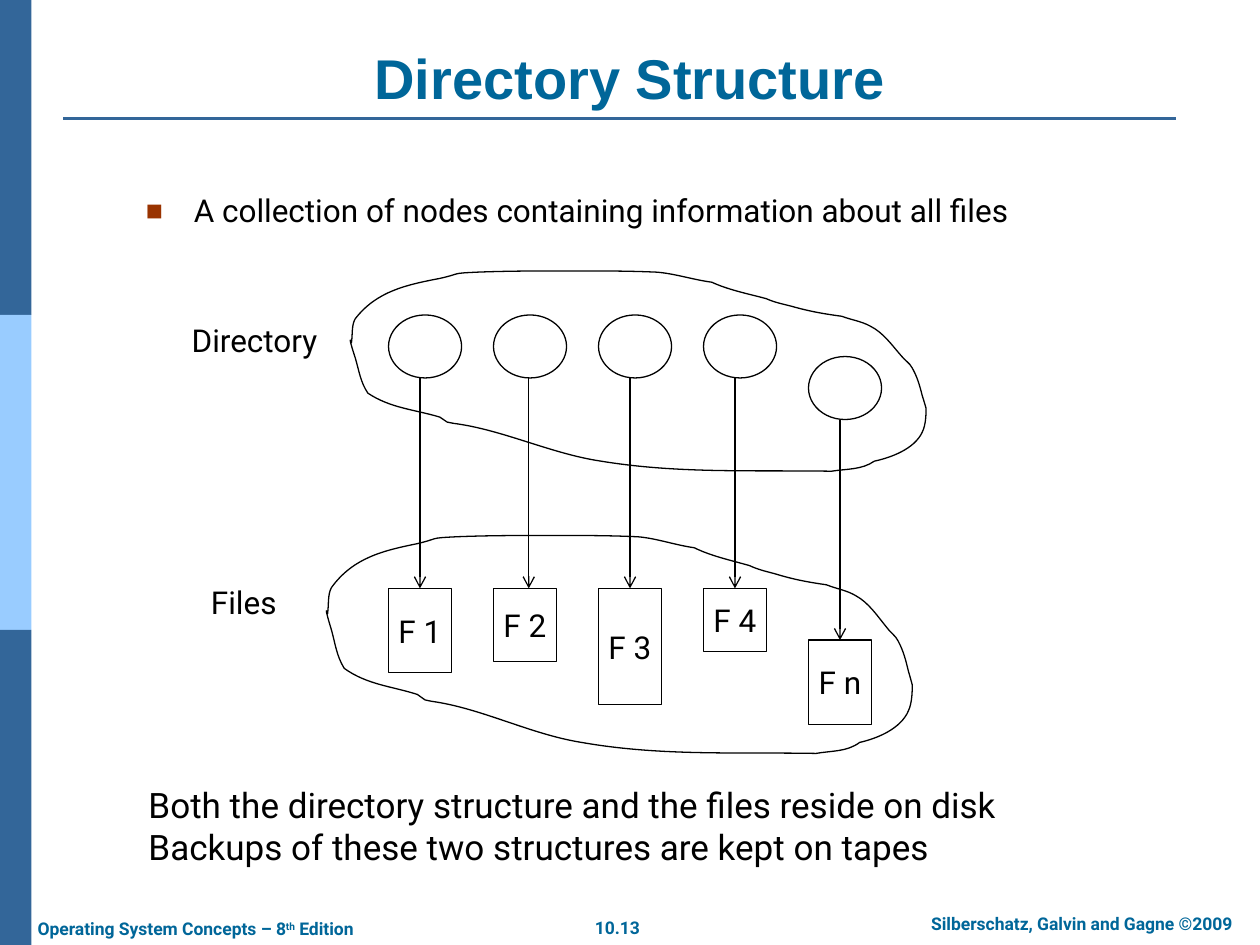
from lxml import etree
from pptx import Presentation
from pptx import util as u
from pptx.dml.color import RGBColor
from pptx.enum import shapes, text
from pptx.oxml.ns import qn

BLACK = RGBColor(0x00, 0x00, 0x00)
WHITE = RGBColor(0xFF, 0xFF, 0xFF)
NAVY = RGBColor(0x33, 0x66, 0x99)
SKY = RGBColor(0x99, 0xCC, 0xFF)
TEAL = RGBColor(0x00, 0x66, 0x99)
BULLET_COLOR = RGBColor(0x99, 0x33, 0x00)

# Content: a paragraph is a string or a list of (text, is superscript)
TITLE = "Directory Structure"
BULLET = "A collection of nodes containing information about all files"
CLOSING = ["Both the directory structure and the files reside on disk",
           "Backups of these two structures are kept on tapes"]
EDITION = [("Operating System Concepts – 8", False), ("th", True), (" Edition", False)]
FOOTERS = [  # paragraph, box, alignment, wrap
    ("10.13", (4.62, 7.23, 0.56, 0.27), "CENTER", False),
    ("Silberschatz, Galvin and Gagne ©2009", (7.1, 7.2, 2.97, 0.27), "CENTER", True),
    (EDITION, (0.2, 7.24, 2.88, 0.27), "LEFT", False),
]
LABELS = [("Directory", (1.42, 2.5, 1.2, 0.4)), ("Files", (1.57, 4.58, 0.73, 0.4))]
FILES = [  # name, file height, drop of the column, arrow shift
    ("F 1", 0.67, 0, 0), ("F 2", 0.58, 0, 0.03), ("F 3", 0.92, 0, 0),
    ("F 4", 0.5, 0, 0), ("F n", 0.67, 1, 0),
]
MIDDLE_LEFT, COLUMN_PITCH = 4.75, 5 / 6
NODE_TOP, NODE_DROP, NODE_SIZE = 2.5, 0.33, (0.58, 0.5)
FILE_TOP, FILE_DROP, FILE_WIDTH = 4.67, 0.41, 0.5

# Cloud outline: start point, then cubic curves (two handles and an end point)
CLOUD_BOX = (2.78, 2.15, 4.57, 1.59)
FILES_CLOUD_BOX = (2.59, 4.25, 4.65, 1.73)
CLOUD_START = (2.79, 2.72)
CLOUD_CURVES = [
    (2.8, 2.65, 2.79, 2.58, 2.82, 2.53), (2.99, 2.31, 3.23, 2.26, 3.49, 2.21),
    (3.67, 2.17, 3.57, 2.17, 3.79, 2.16), (4.04, 2.15, 4.29, 2.15, 4.55, 2.15),
    (4.77, 2.15, 4.99, 2.15, 5.21, 2.16), (5.35, 2.17, 5.5, 2.22, 5.65, 2.24),
    (5.78, 2.3, 5.93, 2.33, 6.08, 2.37), (6.15, 2.4, 6.2, 2.41, 6.28, 2.43),
    (6.42, 2.47, 6.53, 2.49, 6.68, 2.51), (6.76, 2.54, 6.84, 2.55, 6.91, 2.59),
    (7.01, 2.64, 7.08, 2.74, 7.15, 2.82), (7.18, 2.86, 7.22, 2.88, 7.24, 2.92),
    (7.28, 2.99, 7.3, 3.06, 7.32, 3.14), (7.33, 3.17, 7.35, 3.24, 7.35, 3.24),
    (7.35, 3.28, 7.35, 3.37, 7.32, 3.43), (7.26, 3.56, 7.08, 3.63, 6.94, 3.66),
    (6.84, 3.73, 6.72, 3.72, 6.6, 3.74), (5.96, 3.73, 5.38, 3.76, 4.77, 3.66),
    (4.37, 3.6, 3.99, 3.41, 3.6, 3.36), (3.58, 3.36, 3.57, 3.35, 3.55, 3.35),
    (3.53, 3.34, 3.51, 3.32, 3.49, 3.31), (3.29, 3.25, 3.1, 3.24, 2.92, 3.12),
    (2.86, 3.03, 2.85, 2.94, 2.82, 2.84), (2.82, 2.84, 2.78, 2.72, 2.78, 2.7),
    (2.78, 2.69, 2.79, 2.71, 2.79, 2.72),
]


def inches(values):
    return [u.Inches(value) for value in values]


def write(shape, paragraphs, size=18, font="Roboto", color=BLACK, bold=False,
          align="LEFT", anchor="TOP", wrap=True, bullet=False):
    frame = shape.text_frame
    frame.word_wrap = wrap
    frame.vertical_anchor = getattr(text.MSO_ANCHOR, anchor)
    for index, runs in enumerate(paragraphs):
        para = frame.add_paragraph() if index else frame.paragraphs[0]
        para.alignment = getattr(text.PP_ALIGN, align)
        if bullet:
            add_bullet(para)
        for words, raised in [(runs, False)] if isinstance(runs, str) else runs:
            span = para.add_run()
            span.text = words
            span.font.size, span.font.name, span.font.bold = u.Pt(size), font, bold
            span.font.color.rgb = color
            if raised:
                span.font._element.set("baseline", "30000")


def add_bullet(para):
    para.line_spacing = 0.9
    props = para._p.get_or_add_pPr()
    props.set("marL", str(u.Inches(0.38)))
    props.set("indent", str(u.Inches(-0.38)))
    color = etree.SubElement(props, qn("a:buClr"))
    etree.SubElement(color, qn("a:srgbClr"), val=str(BULLET_COLOR))
    etree.SubElement(props, qn("a:buSzPct"), val="90000")
    etree.SubElement(props, qn("a:buFont"), typeface="Arial")
    etree.SubElement(props, qn("a:buChar"), char="■")


def add_text(page, box, paragraphs, **style):
    write(page.shapes.add_textbox(*inches(box)), paragraphs, **style)


def add_block(page, kind, box, fill, outlined=True):
    block = page.shapes.add_shape(kind, *inches(box))
    block.shadow.inherit = False
    block.fill.solid()
    block.fill.fore_color.rgb = fill
    if outlined:
        outline(block)
    else:
        block.line.fill.background()
    return block


def outline(shape):
    shape.line.color.rgb = BLACK
    shape.line.width = u.Pt(0.75)


def add_line(page, start, end, color=BLACK, width=0.75, arrow=False):
    line = page.shapes.add_connector(shapes.MSO_CONNECTOR.STRAIGHT, *inches(start + end))
    line.line.color.rgb = color
    line.line.width = u.Pt(width)
    if arrow:
        etree.SubElement(line.line._get_or_add_ln(), qn("a:tailEnd"), type="arrow")
    etree.SubElement(line._element.spPr, qn("a:effectLst"))
    return line


def add_cloud(page, box):
    """Draw the cloud outline stretched from its own box to the given one."""
    left, top, width, height = CLOUD_BOX

    def place(x, y):
        return inches((box[0] + (x - left) * box[2] / width,
                       box[1] + (y - top) * box[3] / height))

    builder = page.shapes.build_freeform(*place(*CLOUD_START))
    builder.add_line_segments([place(*curve[4:]) for curve in CLOUD_CURVES], close=True)
    cloud = builder.convert_to_shape()
    cloud.shadow.inherit = False
    cloud.fill.background()
    outline(cloud)

    # Turn each straight segment into its cubic curve
    segments = list(cloud._element.iter(qn("a:lnTo")))
    for segment, curve in zip(segments, CLOUD_CURVES):
        segment.tag = qn("a:cubicBezTo")
        for position in (0, 2):
            x, y = place(*curve[position:position + 2])
            handle = etree.Element(qn("a:pt"), x=str(x - cloud.left), y=str(y - cloud.top))
            segment.insert(position // 2, handle)


def main():
    deck = Presentation()
    deck.slide_width, deck.slide_height = inches((10, 7.5))
    page = deck.slides.add_slide(deck.slide_layouts[6])
    rect, oval = shapes.MSO_SHAPE.RECTANGLE, shapes.MSO_SHAPE.OVAL

    # Side stripe, title rule and footers
    for index, color in enumerate((NAVY, SKY, NAVY)):
        add_block(page, rect, (0, index * 2.5, 0.25, 2.5), color, outlined=False)
    add_line(page, (0.5, 0.94), (9.33, 0.94), color=NAVY, width=1.5)
    for words, box, align, wrap in FOOTERS:
        add_text(page, box, [words], size=10, color=TEAL, bold=True, align=align, wrap=wrap)

    # Title and bullet
    add_text(page, (0.5, 0.3, 9, 0.63), [TITLE], size=32, font="Arial", color=TEAL,
             bold=True, align="CENTER", anchor="BOTTOM")
    add_text(page, (1.06, 1.5, 8.06, 0.39), [BULLET], bullet=True)

    # Directory nodes, files and the arrows between them
    for index, (name, height, drop, shift) in enumerate(FILES):
        left = MIDDLE_LEFT + (index - len(FILES) // 2) * COLUMN_PITCH
        node_top = NODE_TOP + drop * NODE_DROP
        file_top = FILE_TOP + drop * FILE_DROP
        add_block(page, oval, (left, node_top, *NODE_SIZE), WHITE)
        file_box = add_block(page, rect, (left, file_top, FILE_WIDTH, height), WHITE)
        write(file_box, [name], align="CENTER", anchor="MIDDLE", wrap=False)
        x = left + FILE_WIDTH / 2 + shift
        arrow = add_line(page, (x, node_top + NODE_SIZE[1]), (x, file_top), arrow=True)
        if not shift:
            arrow.end_connect(file_box, 0)

    # Clouds, their labels and the closing lines
    for box in (CLOUD_BOX, FILES_CLOUD_BOX):
        add_cloud(page, box)
    for name, box in LABELS:
        add_text(page, box, [name], align="CENTER", anchor="MIDDLE", wrap=False)
    add_text(page, (1.08, 6.17, 7.69, 0.42), CLOSING, size=20)

    deck.save("out.pptx")


if __name__ == "__main__":
    main()
